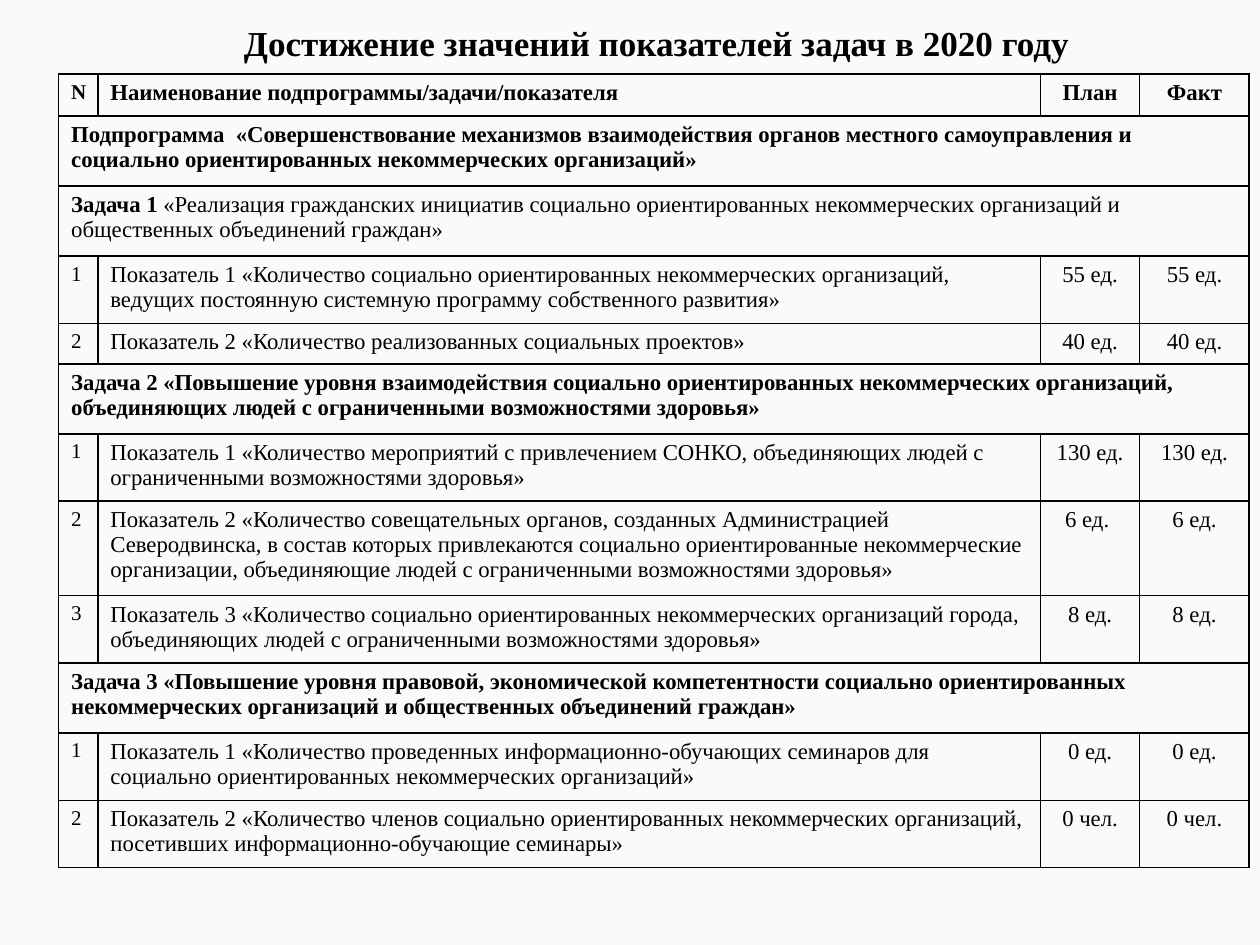
from lxml.etree import SubElement
from pptx import Presentation
from pptx.dml.color import RGBColor
from pptx.enum.text import PP_ALIGN
from pptx.oxml.ns import qn
from pptx.util import Pt

COLORS = {"page": "FAFAFA", "ink": "000000"}
FONT = "Times New Roman"
COLUMN_WIDTHS = [22.4, 538.6, 56.8, 62.6]
HEADER_HEIGHT = 24
SECTION_HEIGHT = 40
INDICATOR_HEIGHTS = {1: 23, 2: 38.5, 3: 54}

HEADER = ["N", "Наименование подпрограммы/задачи/показателя", "План", "Факт"]
PROGRAM = ("Подпрограмма  «Совершенствование механизмов взаимодействия органов местного "
           "самоуправления и социально ориентированных некоммерческих организаций»")
TASKS = [
    ("Задача 1 ",
     "«Реализация гражданских инициатив социально ориентированных некоммерческих "
     "организаций и общественных объединений граждан»",
     [("Показатель 1 «Количество социально ориентированных некоммерческих организаций, "
       "ведущих постоянную системную программу собственного развития»", "55 ед.", "55 ед.", 2),
      ("Показатель 2 «Количество реализованных социальных проектов»", "40 ед.", "40 ед.", 1)]),
    ("Задача 2 «Повышение уровня взаимодействия социально ориентированных некоммерческих "
     "организаций, объединяющих людей с ограниченными возможностями здоровья»",
     "",
     [("Показатель 1 «Количество мероприятий с привлечением СОНКО, объединяющих людей "
       "с ограниченными возможностями здоровья»", "130 ед.", "130 ед.", 2),
      ("Показатель 2 «Количество совещательных органов, созданных Администрацией "
       "Северодвинска, в состав которых привлекаются социально ориентированные "
       "некоммерческие организации, объединяющие людей с ограниченными возможностями "
       "здоровья»", "6 ед. ", "6 ед.", 3),
      ("Показатель 3 «Количество социально ориентированных некоммерческих организаций "
       "города, объединяющих людей с ограниченными возможностями здоровья»",
       "8 ед.", "8 ед.", 2)]),
    ("Задача 3 «Повышение уровня правовой, экономической компетентности социально "
     "ориентированных некоммерческих организаций и общественных объединений граждан»",
     "",
     [("Показатель 1 «Количество проведенных информационно-обучающих семинаров для "
       "социально ориентированных некоммерческих организаций»", "0 ед.", "0 ед.", 2),
      ("Показатель 2 «Количество членов социально ориентированных некоммерческих "
       "организаций, посетивших информационно-обучающие семинары»",
       "0 чел.", "0 чел.", 2)]),
]


def write(frame, text, size=13, bold=False, align=PP_ALIGN.LEFT):
    """Append a formatted run to the first paragraph of a text frame."""
    para = frame.paragraphs[0]
    para.alignment = align
    span = para.add_run()
    span.text = text
    span.font.name = FONT
    span.font.size = Pt(size)
    span.font.bold = bold
    span.font.color.rgb = RGBColor.from_string(COLORS["ink"])


def outline(cell):
    """Clear the fill of a cell and draw a thin line on its four sides."""
    cell.fill.background()
    properties = cell._tc.get_or_add_tcPr()
    for index, side in enumerate(("a:lnL", "a:lnR", "a:lnT", "a:lnB")):
        line = properties.makeelement(qn(side), {"w": str(Pt(0.96))})
        fill = SubElement(line, qn("a:solidFill"))
        SubElement(fill, qn("a:srgbClr"), val=COLORS["ink"])
        properties.insert(index, line)


def fill_columns(cells, values, bold=False):
    """Write the number, the name and the two centred values of a row."""
    for column, (cell, value) in enumerate(zip(cells, values)):
        is_value = column >= 2
        if is_value and not bold:
            cell.margin_left = cell.margin_right = Pt(0.7)
        write(cell.text_frame, value, size=12 if column == 0 else 13, bold=bold,
              align=PP_ALIGN.CENTER if is_value else PP_ALIGN.LEFT)


def fill_section(cells, heading, description=""):
    """Merge a row and write its bold heading and plain description."""
    cells[0].merge(cells[-1])
    write(cells[0].text_frame, heading, bold=True)
    if description:
        write(cells[0].text_frame, description)


def add_title(page, left, top, width, height):
    """Place the slide title in the given box."""
    box = page.shapes.add_textbox(Pt(left), Pt(top), Pt(width), Pt(height))
    box.text_frame.word_wrap = True
    write(box.text_frame, "Достижение значений показателей задач в 2020 году",
          size=20, bold=True, align=PP_ALIGN.CENTER)


def add_indicator_table(page, left, top):
    """Place the table of tasks and indicators at the given corner."""
    heights = [HEADER_HEIGHT, SECTION_HEIGHT]
    for _, _, indicators in TASKS:
        heights.append(SECTION_HEIGHT)
        heights.extend(INDICATOR_HEIGHTS[lines] for *_, lines in indicators)
    table = page.shapes.add_table(len(heights), len(COLUMN_WIDTHS), Pt(left), Pt(top),
                                  Pt(sum(COLUMN_WIDTHS)), Pt(sum(heights))).table
    table.first_row = table.horz_banding = False
    for column, width in zip(table.columns, COLUMN_WIDTHS):
        column.width = Pt(width)
    for row, height in zip(table.rows, heights):
        row.height = Pt(height)
    for cell in table.iter_cells():
        outline(cell)

    rows = iter([list(row.cells) for row in table.rows])
    fill_columns(next(rows), HEADER, bold=True)
    fill_section(next(rows), PROGRAM)
    for heading, description, indicators in TASKS:
        fill_section(next(rows), heading, description)
        for number, (name, plan, fact, _) in enumerate(indicators, 1):
            fill_columns(next(rows), [str(number), name, plan, fact])


def main():
    """Build the slide and save the deck."""
    deck = Presentation()
    deck.slide_width, deck.slide_height = Pt(720), Pt(540)
    page = deck.slides.add_slide(deck.slide_layouts[6])
    page.background.fill.solid()
    page.background.fill.fore_color.rgb = RGBColor.from_string(COLORS["page"])
    add_indicator_table(page, 33.5, 42.4)
    add_title(page, 115.7, 8.8, 519, 31)
    deck.save("out.pptx")


if __name__ == "__main__":
    main()
